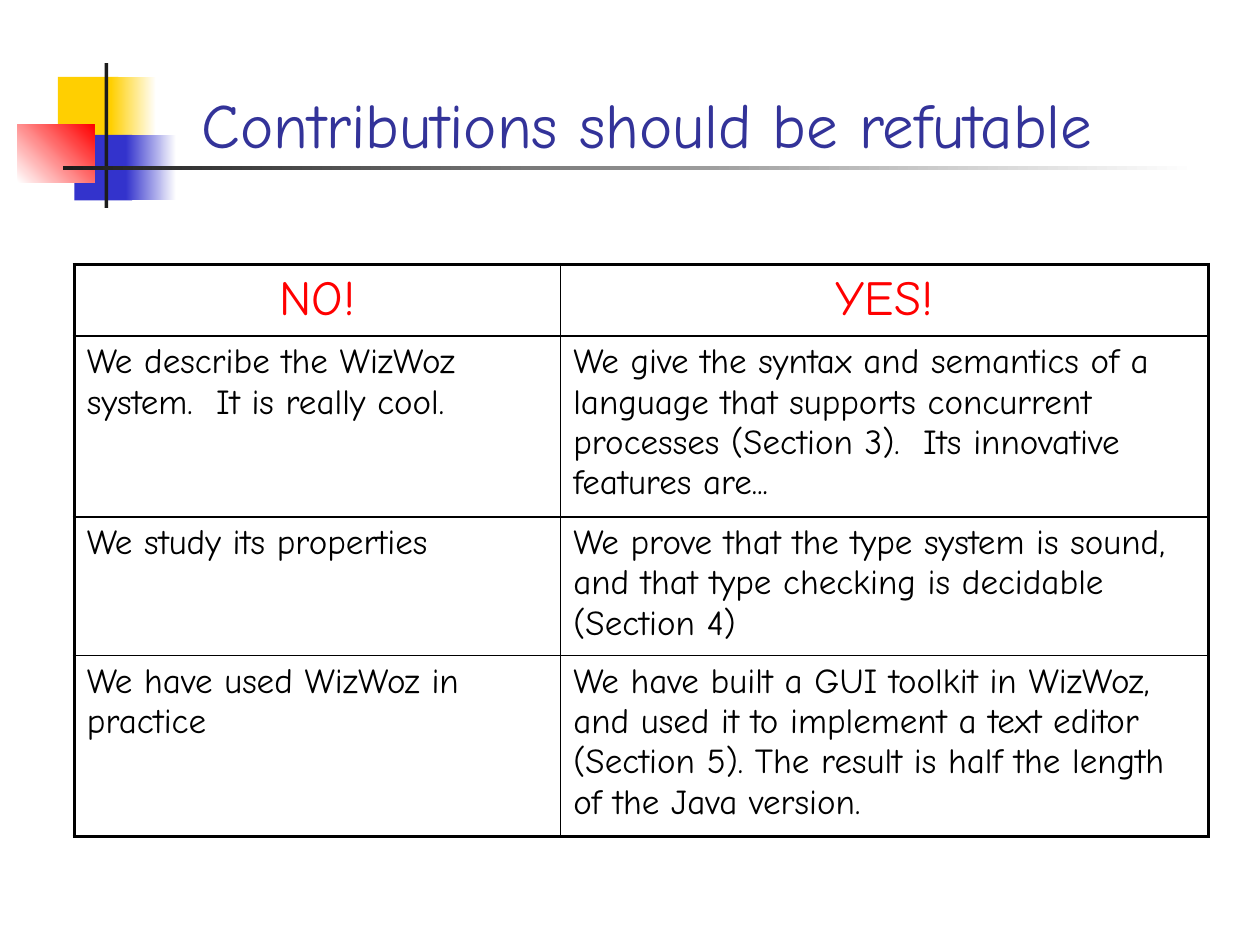
from lxml import etree
from pptx import Presentation
from pptx.dml.color import RGBColor
from pptx.enum import shapes, text
from pptx.oxml import ns
from pptx.util import Inches, Pt

FONT = "Comic Neue"
YELLOW = RGBColor(0xFF, 0xCF, 0x01)
BLUE = RGBColor(0x33, 0x33, 0xCC)
RED = RGBColor(0xFF, 0x00, 0x00)
WHITE = RGBColor(0xFF, 0xFF, 0xFF)
CHARCOAL = RGBColor(0x1C, 0x1C, 0x1C)
BLACK = RGBColor(0x00, 0x00, 0x00)
TITLE_BLUE = RGBColor(0x33, 0x33, 0x99)


def add_span(para, words, size, color):
    span = para.add_run()
    span.text = words
    span.font.name = FONT
    span.font.size = Pt(size)
    span.font.color.rgb = color


def add_border(cell, side, width):
    properties = cell._tc.get_or_add_tcPr()
    line = etree.SubElement(properties, ns.qn(f"a:ln{side}"), w=str(Pt(width)))
    fill = etree.SubElement(line, ns.qn("a:solidFill"))
    etree.SubElement(fill, ns.qn("a:srgbClr"), val=str(BLACK))


deck = Presentation()
deck.slide_width, deck.slide_height = Inches(10), Inches(7.5)
page = deck.slides.add_slide(deck.slide_layouts[6])

# Corner ornament and title rule: left, top, width, height, start, end, angle
ornament = [
    (0.46, 0.61, 0.48, 0.52, YELLOW, None, 0),
    (0.88, 0.61, 0.36, 0.52, YELLOW, WHITE, 0),
    (0.59, 1.07, 0.46, 0.52, BLUE, None, 0),
    (1, 1.07, 0.4, 0.52, BLUE, WHITE, 0),
    (0.14, 0.99, 0.61, 0.46, WHITE, RED, 45),
    (0.83, 0.5, 0.03, 1.15, CHARCOAL, None, 0),
    (0.5, 1.32, 9, 0.03, CHARCOAL, WHITE, 0),
]
for left, top, width, height, start, end, angle in ornament:
    block = page.shapes.add_shape(
        shapes.MSO_SHAPE.RECTANGLE,
        Inches(left), Inches(top), Inches(width), Inches(height))
    block.shadow.inherit = False
    block.line.fill.background()
    if end is None:
        block.fill.solid()
        block.fill.fore_color.rgb = start
    else:
        block.fill.gradient()
        block.fill.gradient_angle = angle
        for stop, color in zip(block.fill.gradient_stops, (start, end)):
            stop.color.rgb = color

# Title
box = page.shapes.add_textbox(Inches(1.5), Inches(0.08), Inches(8.52), Inches(1.25))
box.text_frame.word_wrap = True
box.text_frame.vertical_anchor = text.MSO_ANCHOR.BOTTOM
add_span(box.text_frame.paragraphs[0], "Contributions should be refutable", 36, TITLE_BLUE)

# Comparison table
rows = [
    ("NO!", "YES!"),
    ("We describe the WizWoz system.  It is really cool.",
     "We give the syntax and semantics of a language that supports concurrent "
     "processes (Section 3).  Its innovative features are..."),
    ("We study its properties",
     "We prove that the type system is sound, and that type checking is "
     "decidable (Section 4)"),
    ("We have used WizWoz in practice",
     "We have built a GUI toolkit in WizWoz, and used it to implement a text "
     "editor (Section 5). The result is half the length of the Java version."),
]
column_widths = [3.86, 5.14]
row_heights = [0.55, 1.18, 1.1, 1.18]
table = page.shapes.add_table(
    len(rows), len(column_widths), Inches(0.59), Inches(2.1),
    Inches(sum(column_widths)), Inches(sum(row_heights))).table
table.first_row = table.horz_banding = False
for column, width in zip(table.columns, column_widths):
    column.width = Inches(width)
for row, height in zip(table.rows, row_heights):
    row.height = Inches(height)

last_row, last_column = len(rows) - 1, len(column_widths) - 1
for r, row in enumerate(rows):
    for c, words in enumerate(row):
        cell = table.cell(r, c)
        # Thick outer frame, thin inner rules
        outer_edges = {"L": c == 0, "R": c == last_column, "T": r == 0, "B": r == last_row}
        for side, is_outer in outer_edges.items():
            add_border(cell, side, 2.25 if is_outer else 1)
        cell.fill.background()
        para = cell.text_frame.paragraphs[0]
        if r == 0:
            para.alignment = text.PP_ALIGN.CENTER
            add_span(para, words, 28, RED)
        else:
            add_span(para, words, 20, BLACK)

deck.save("out.pptx")
